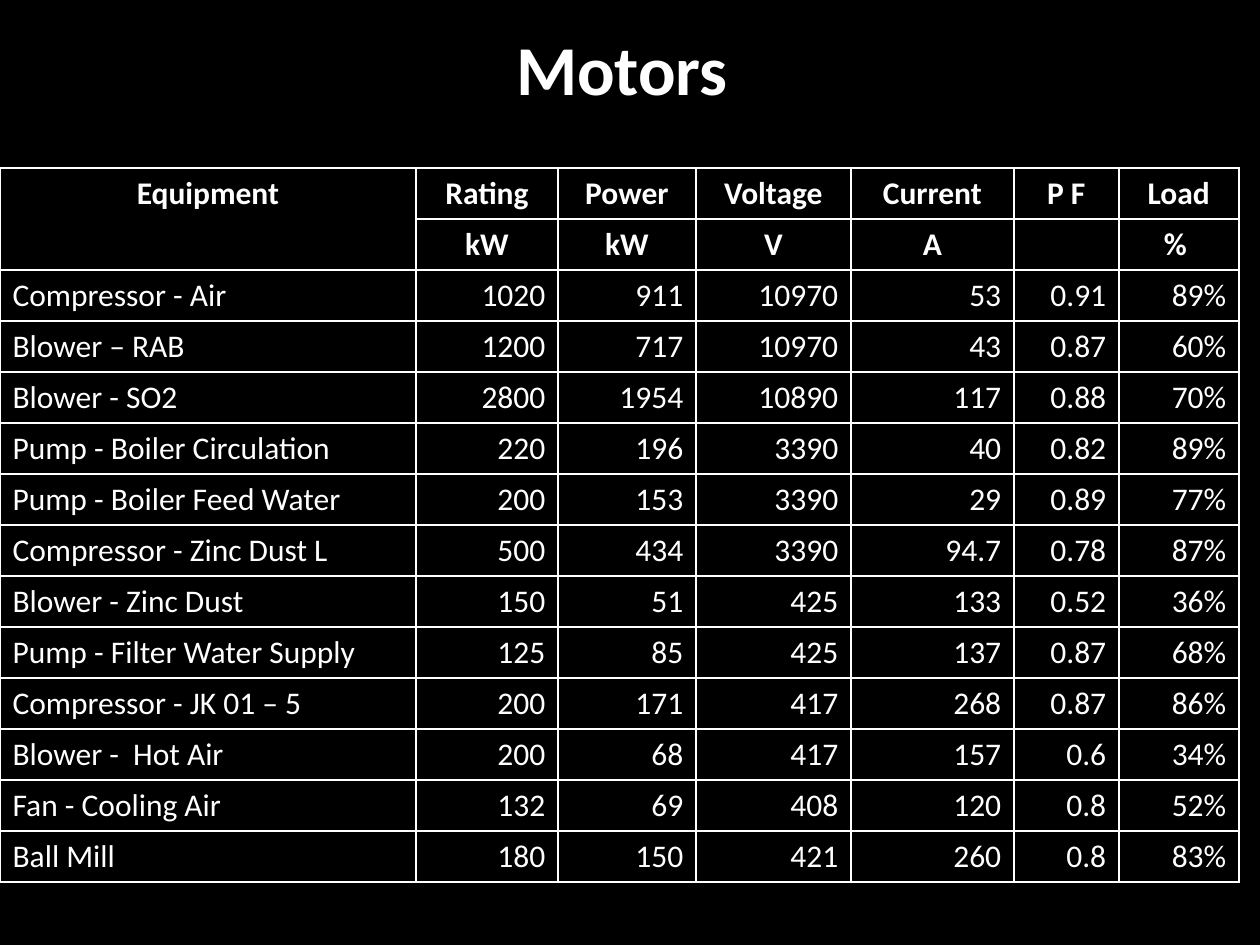
from lxml import etree
from pptx import Presentation
from pptx import util as u
from pptx.dml.color import RGBColor
from pptx.enum import text
from pptx.oxml import ns

PX = 914400 // 126
BLACK = RGBColor(0, 0, 0)
WHITE = RGBColor(255, 255, 255)
FONT = "Calibri"
LEFT, MID, RIGHT = text.PP_ALIGN.LEFT, text.PP_ALIGN.CENTER, text.PP_ALIGN.RIGHT
TOP, BASE = text.MSO_ANCHOR.TOP, text.MSO_ANCHOR.BOTTOM

WIDTHS = [416, 142, 138, 155, 163, 105, 120]
ROW = 51
HANG = 48

HEADS = [
    ["Equipment", "Rating", "Power", "Voltage", "Current", "P F", "Load"],
    ["", "kW", "kW", "V", "A", "", "% "],
]
MOTORS = [
    ["Compressor - Air", "1020", "911", "10970", "53", "0.91", "89%"],
    ["Blower – RAB", "1200", "717", "10970", "43", "0.87", "60%"],
    ["Blower - SO2", "2800", "1954", "10890", "117", "0.88", "70%"],
    ["Pump - Boiler Circulation", "220", "196", "3390", "40", "0.82", "89%"],
    ["Pump - Boiler Feed Water", "200", "153", "3390", "29", "0.89", "77%"],
    ["Compressor - Zinc Dust L", "500", "434", "3390", "94.7", "0.78", "87%"],
    ["Blower - Zinc Dust", "150", "51", "425", "133", "0.52", "36%"],
    ["Pump - Filter Water Supply", "125", "85", "425", "137", "0.87", "68%"],
    ["Compressor - JK 01 – 5", "200", "171", "417", "268", "0.87", "86%"],
    ["Blower -  Hot Air", "200", "68", "417", "157", "0.6", "34%"],
    ["Fan - Cooling Air", "132", "69", "408", "120", "0.8", "52%"],
    ["Ball Mill", "180", "150", "421", "260", "0.8", "83%"],
]


def px(n):
    return u.Emu(n * PX)


def add_run(para, words, size, bold):
    run = para.add_run()
    run.text = words
    font = run.font
    font.name, font.size, font.bold = FONT, u.Pt(size), bold
    font.color.rgb = WHITE


def add_title(slide, words):
    box = slide.shapes.add_textbox(0, 0, px(1260), px(136))
    frame = box.text_frame
    frame.word_wrap = True
    frame.vertical_anchor = text.MSO_ANCHOR.MIDDLE
    para = frame.paragraphs[0]
    para.alignment = MID
    add_run(para, words, 40, True)


def add_edges(cell):
    props = cell._tc.get_or_add_tcPr()
    for side in ("a:lnL", "a:lnR", "a:lnT", "a:lnB"):
        line = etree.SubElement(props, ns.qn(side), w=str(u.Pt(1)))
        fill = etree.SubElement(line, ns.qn("a:solidFill"))
        etree.SubElement(fill, ns.qn("a:srgbClr"), val=str(WHITE))


def fill_cell(cell, words, align, anchor, bold):
    add_edges(cell)
    cell.fill.background()
    cell.vertical_anchor = anchor
    para = cell.text_frame.paragraphs[0]
    para.alignment = align
    # Hanging indent
    props = para._p.get_or_add_pPr()
    props.set("marL", str(px(HANG)))
    props.set("indent", str(-px(HANG)))
    if words:
        add_run(para, words, 18, bold)


def add_grid(slide, left, top):
    rows = HEADS + MOTORS
    frame = slide.shapes.add_table(len(rows), len(WIDTHS), px(left), px(top),
                                   px(sum(WIDTHS)), px(ROW * len(rows)))
    table = frame.table
    table.horz_banding = False
    for col, wide in zip(table.columns, WIDTHS):
        col.width = px(wide)
    for r, row in enumerate(rows):
        table.rows[r].height = px(ROW)
        head = r < len(HEADS)
        for c, words in enumerate(row):
            align = MID if head else RIGHT if c else LEFT
            fill_cell(table.cell(r, c), words, align, TOP if head else BASE, head)
    # The equipment heading spans both heading rows
    table.cell(0, 0).merge(table.cell(1, 0))


def main():
    deck = Presentation()
    deck.slide_width, deck.slide_height = px(1260), px(945)
    slide = deck.slides.add_slide(deck.slide_layouts[6])
    back = slide.background.fill
    back.solid()
    back.fore_color.rgb = BLACK
    add_title(slide, "Motors ")
    add_grid(slide, 0, 168)
    deck.save("out.pptx")


if __name__ == "__main__":
    main()
